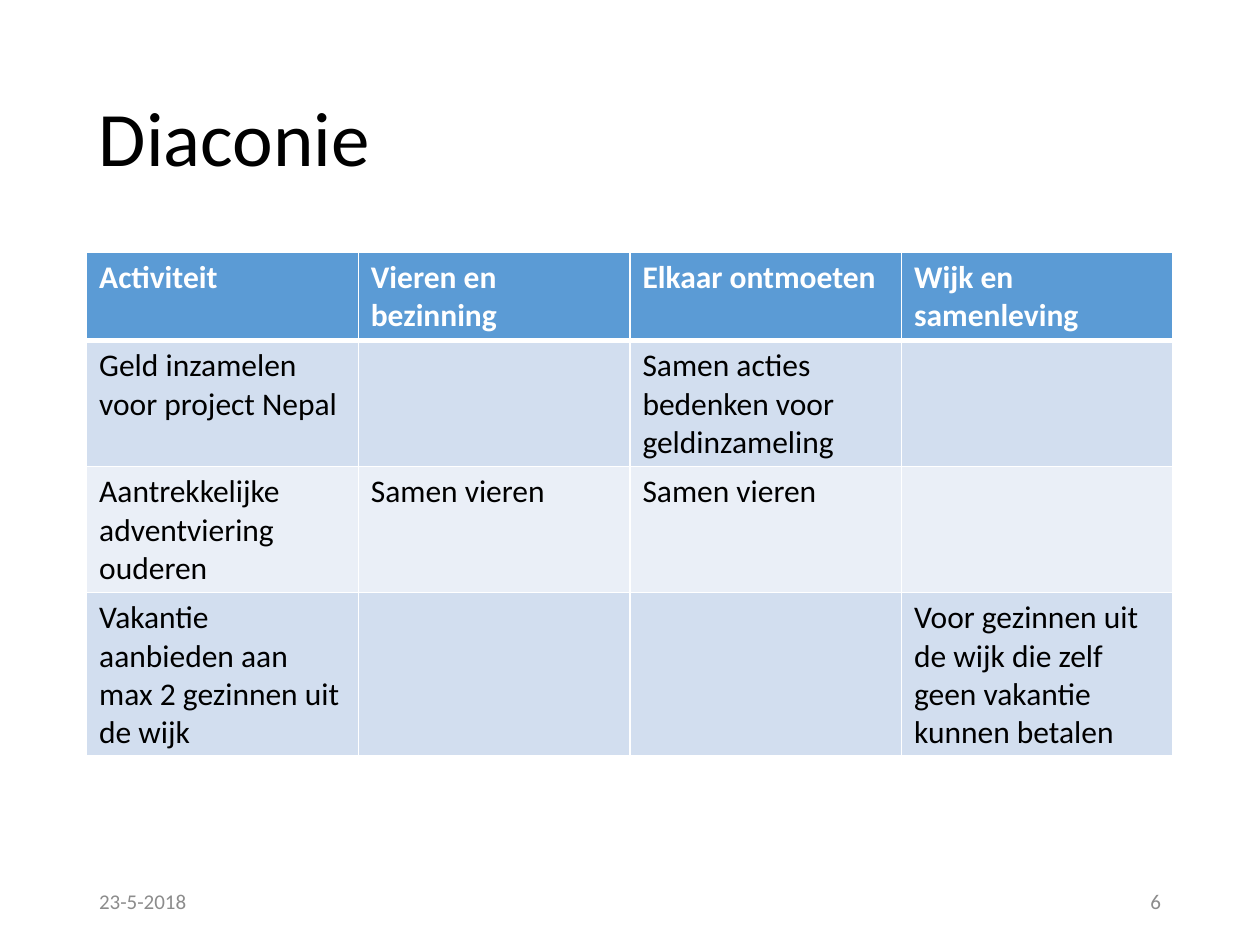
from lxml import etree
from pptx import Presentation
from pptx.dml.color import RGBColor
from pptx.enum import text
from pptx.oxml import ns
from pptx.util import Pt

COLORS = {
    "ink": "000000",
    "white": "FFFFFF",
    "footer": "8C8C8C",
    "header": "5B9BD5",
    "band_dark": "D2DEEF",
    "band_light": "EAEFF7",
}
LEFT, WIDTH = 49.5, 621


def format_runs(paragraph, size, color, bold=False):
    for run in paragraph.runs:
        run.font.name = "Calibri"
        run.font.size = Pt(size)
        run.font.bold = bold
        run.font.color.rgb = RGBColor.from_string(COLORS[color])


def add_border(cell, side, width):
    """Draw a white line on one side (L, R, T or B) of a cell; call before filling."""
    line = etree.SubElement(cell._tc.get_or_add_tcPr(), ns.qn(f"a:ln{side}"), w=str(Pt(width)))
    fill = etree.SubElement(line, ns.qn("a:solidFill"))
    etree.SubElement(fill, ns.qn("a:srgbClr"), val=COLORS["white"])


prs = Presentation()
prs.slide_width, prs.slide_height = Pt(720), Pt(540)
slide = prs.slides.add_slide(prs.slide_layouts[6])

# Title, date and page number
labels = [
    ("Diaconie", LEFT, 28.75, WIDTH, 104.4, 44, "ink", text.PP_ALIGN.LEFT, 0.9),
    ("23-5-2018", LEFT, 500.5, 162, 28.75, 12, "footer", text.PP_ALIGN.LEFT, 1),
    ("6", LEFT + WIDTH - 162, 500.5, 162, 28.75, 12, "footer", text.PP_ALIGN.RIGHT, 1),
]
for wording, left, top, width, height, size, color, align, spacing in labels:
    frame = slide.shapes.add_textbox(Pt(left), Pt(top), Pt(width), Pt(height)).text_frame
    frame.word_wrap = True
    frame.vertical_anchor = text.MSO_ANCHOR.MIDDLE
    frame.text = wording
    paragraph = frame.paragraphs[0]
    paragraph.alignment = align
    paragraph.line_spacing = spacing
    format_runs(paragraph, size, color)

# Activities against the three goals
activities = [
    ["Activiteit", "Vieren en bezinning", "Elkaar ontmoeten", "Wijk en samenleving"],
    ["Geld inzamelen voor project Nepal", "", "Samen acties bedenken voor geldinzameling", ""],
    ["Aantrekkelijke adventviering ouderen", "Samen vieren", "Samen vieren", ""],
    ["Vakantie aanbieden aan max 2 gezinnen uit de wijk", "", "",
     "Voor gezinnen uit de wijk die zelf geen vakantie kunnen betalen"],
]
row_heights = [50.4, 72, 72, 93.6]
table = slide.shapes.add_table(
    len(activities), len(activities[0]), Pt(LEFT), Pt(144), Pt(WIDTH), Pt(sum(row_heights))
).table

for row, (entries, height) in enumerate(zip(activities, row_heights)):
    table.rows[row].height = Pt(height)
    is_header = row == 0
    band = "header" if is_header else "band_dark" if row % 2 else "band_light"
    for column, entry in enumerate(entries):
        cell = table.cell(row, column)
        for side in "LRTB":
            heavy = (row, side) in [(0, "B"), (1, "T")]
            add_border(cell, side, 3 if heavy else 1)
        cell.fill.solid()
        cell.fill.fore_color.rgb = RGBColor.from_string(COLORS[band])
        if entry:
            cell.text_frame.text = entry
            format_runs(cell.text_frame.paragraphs[0], 18,
                        "white" if is_header else "ink", is_header)

prs.save("out.pptx")
